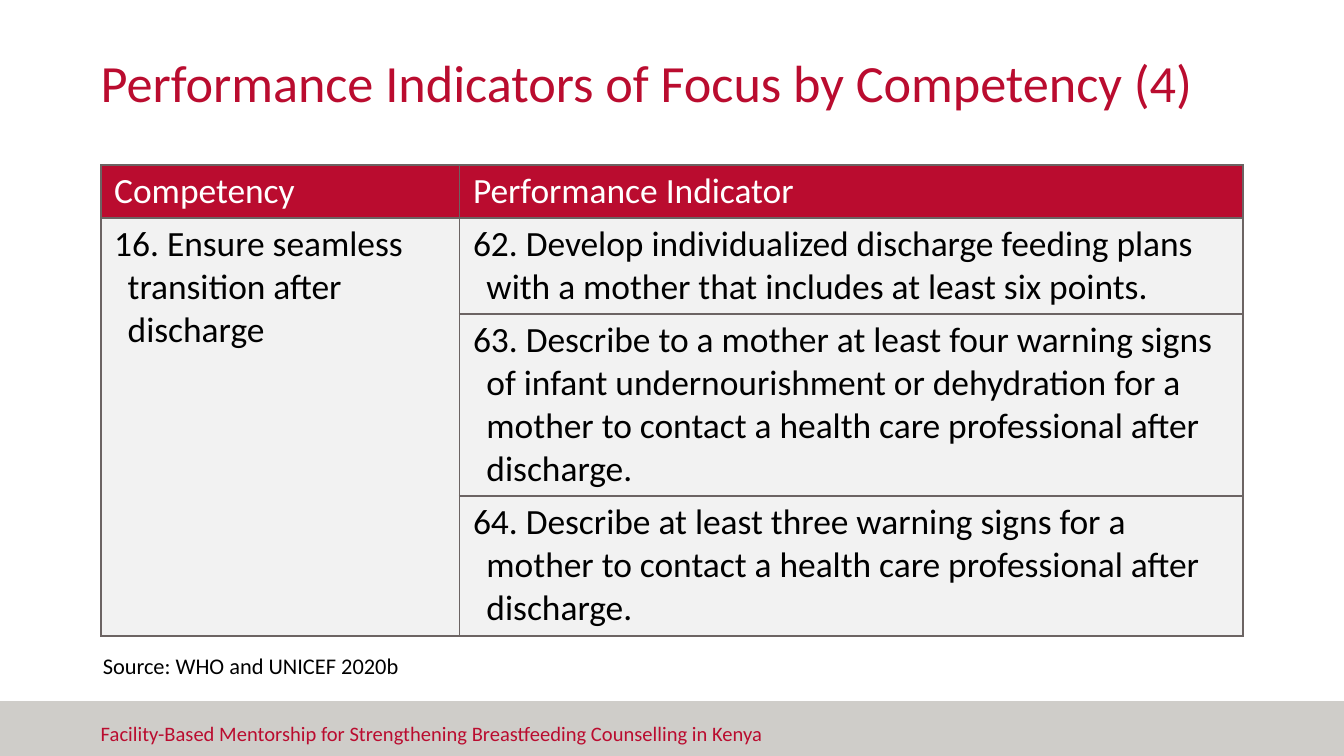
from lxml import etree
from pptx import Presentation
from pptx.dml.color import RGBColor
from pptx.enum import shapes, text
from pptx.oxml import ns
from pptx.util import Pt

FONT = "Calibri"
RED, GREY, PALE, LINE = "BA0C2F", "CFCDC9", "F2F2F2", "6C6463"
WHITE, BLACK = "FFFFFF", "000000"
MARGIN = 54
COLUMN_WIDTHS = (192.24, 419.76)
ROW_HEIGHTS = (28.4, 51.5, 97.5, 75)
HEADERS = ("Competency", "Performance Indicator")
COMPETENCY = "16. Ensure seamless transition after discharge"
INDICATORS = (
    "62. Develop individualized discharge feeding plans with a mother that "
    "includes at least six points.",
    "63. Describe to a mother at least four warning signs of infant "
    "undernourishment or dehydration for a mother to contact a health care "
    "professional after discharge.",
    "64. Describe at least three warning signs for a mother to contact a "
    "health care professional after discharge.",
)


def color(value):
    return RGBColor.from_string(value)


def style_paragraph(paragraph, size, font_color):
    paragraph.font.name = FONT
    paragraph.font.size = Pt(size)
    paragraph.font.color.rgb = color(font_color)


def set_margins(target, left, top, right, bottom):
    target.margin_left, target.margin_top = Pt(left), Pt(top)
    target.margin_right, target.margin_bottom = Pt(right), Pt(bottom)


def add_text(slide, box, content, size, font_color, margins,
             anchor=text.MSO_ANCHOR.TOP):
    shape = slide.shapes.add_textbox(*map(Pt, box))
    frame = shape.text_frame
    frame.word_wrap = True
    frame.vertical_anchor = anchor
    set_margins(frame, *margins)
    frame.text = content
    style_paragraph(frame.paragraphs[0], size, font_color)


def add_footer_band(slide):
    band = slide.shapes.add_shape(
        shapes.MSO_SHAPE.RECTANGLE, Pt(0), Pt(375.6), Pt(720), Pt(29.4))
    band.shadow.inherit = False
    band.fill.solid()
    band.fill.fore_color.rgb = color(GREY)
    band.line.fill.background()


def add_borders(cell):
    properties = cell._tc.get_or_add_tcPr()
    for index, side in enumerate(("a:lnL", "a:lnR", "a:lnT", "a:lnB")):
        border = etree.Element(ns.qn(side), w=str(Pt(1)))
        fill = etree.SubElement(border, ns.qn("a:solidFill"))
        etree.SubElement(fill, ns.qn("a:srgbClr"), val=LINE)
        properties.insert(index, border)


def fill_cell(cell, content, fill, font_color, hanging=False):
    set_margins(cell, 7.2, 2.6, 7.2, 2.6)
    cell.fill.solid()
    cell.fill.fore_color.rgb = color(fill)
    add_borders(cell)
    cell.text = content
    paragraph = cell.text_frame.paragraphs[0]
    if hanging:
        indent = paragraph._p.get_or_add_pPr()
        indent.set("marL", str(Pt(7.2)))
        indent.set("indent", str(Pt(-7.2)))
    style_paragraph(paragraph, 19, font_color)
    paragraph.font.bold = False


def add_indicator_table(slide):
    frame = slide.shapes.add_table(
        len(ROW_HEIGHTS), len(COLUMN_WIDTHS), Pt(MARGIN), Pt(88.5),
        Pt(sum(COLUMN_WIDTHS)), Pt(sum(ROW_HEIGHTS)))
    table = frame.table
    table.horz_banding = False
    for column, width in zip(table.columns, COLUMN_WIDTHS):
        column.width = Pt(width)
    for row, height in zip(table.rows, ROW_HEIGHTS):
        row.height = Pt(height)

    for index, header in enumerate(HEADERS):
        fill_cell(table.cell(0, index), header, RED, WHITE)
    for row, indicator in enumerate(INDICATORS, start=1):
        competency = COMPETENCY if row == 1 else ""
        fill_cell(table.cell(row, 0), competency, PALE, BLACK, hanging=True)
        fill_cell(table.cell(row, 1), indicator, PALE, BLACK, hanging=True)
    table.cell(1, 0).merge(table.cell(len(INDICATORS), 0))


def main():
    presentation = Presentation()
    presentation.slide_width, presentation.slide_height = Pt(720), Pt(405)
    slide = presentation.slides.add_slide(presentation.slide_layouts[6])

    # Footer
    add_footer_band(slide)
    add_text(slide, (MARGIN, 383, 378.7, 33.8),
             "Facility-Based Mentorship for Strengthening Breastfeeding "
             "Counselling in Kenya", 11, RED, (0, 3.6, 7.2, 3.6))

    # Title
    add_text(slide, (MARGIN, 20.2, 612, 40.3),
             "Performance Indicators of Focus by Competency (4)", 28, RED,
             (0, 0, 0, 0), text.MSO_ANCHOR.BOTTOM)

    # Table and its source
    add_indicator_table(slide)
    add_text(slide, (48, 345.6, 499.7, 21.6), "Source: WHO and UNICEF 2020b",
             12, BLACK, (7.2, 3.6, 7.2, 3.6))

    presentation.save("out.pptx")


if __name__ == "__main__":
    main()
